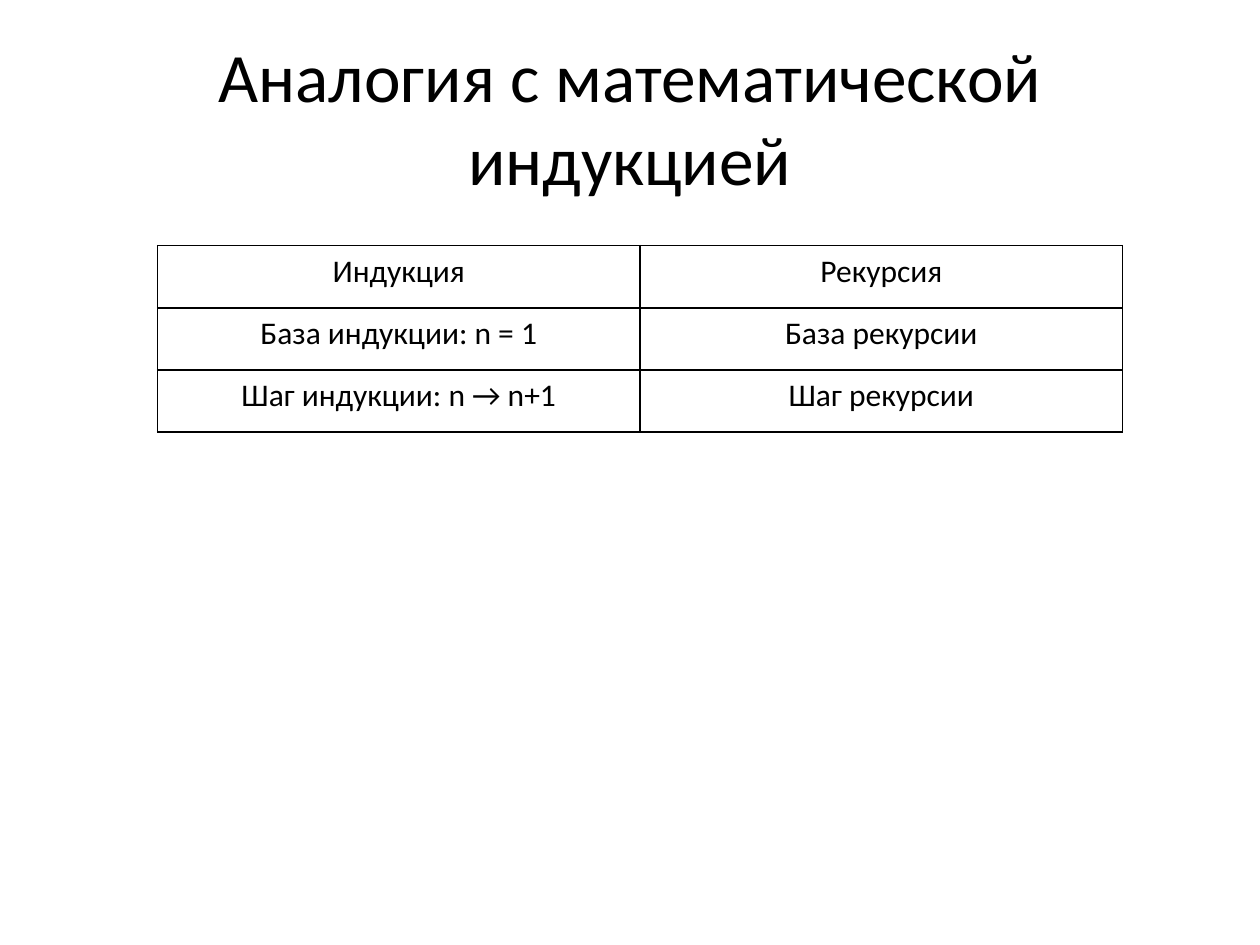
from lxml.etree import SubElement
from pptx import Presentation
from pptx.dml.color import RGBColor
from pptx.enum.text import MSO_ANCHOR, PP_ALIGN
from pptx.oxml.ns import qn
from pptx.util import Inches, Pt

FONT = "Calibri"
BLACK = "000000"
ROWS = [
    ("Индукция", "Рекурсия"),
    ("База индукции: n = 1", "База рекурсии"),
    ("Шаг индукции: n → n+1", "Шаг рекурсии"),
]


def color(value):
    return RGBColor.from_string(value)


def set_text(frame, text, size):
    frame.text = text
    para = frame.paragraphs[0]
    para.alignment = PP_ALIGN.CENTER
    for span in para.runs:
        span.font.name = FONT
        span.font.size = Pt(size)
        span.font.bold = False
        span.font.color.rgb = color(BLACK)


def set_borders(cell, value, width):
    """Draw a solid line on all four sides of a cell that has no fill yet."""
    properties = cell._tc.get_or_add_tcPr()
    for side in ("a:lnL", "a:lnR", "a:lnT", "a:lnB"):
        line = SubElement(properties, qn(side), w=str(Pt(width)))
        fill = SubElement(line, qn("a:solidFill"))
        SubElement(fill, qn("a:srgbClr"), val=value)


def place_title(page, text, left, top, width, height):
    title = page.shapes.title
    title.left, title.top = Inches(left), Inches(top)
    title.width, title.height = Inches(width), Inches(height)
    frame = title.text_frame
    frame.word_wrap = True
    frame.vertical_anchor = MSO_ANCHOR.MIDDLE
    set_text(frame, text, 39.6)


def place_comparison(page, rows, left, top, width, height):
    box = [Inches(length) for length in (left, top, width, height)]
    table = page.shapes.add_table(len(rows), len(rows[0]), *box).table
    table.first_row = False
    table.horz_banding = False
    for row, texts in enumerate(rows):
        for column, text in enumerate(texts):
            cell = table.cell(row, column)
            set_text(cell.text_frame, text, 18)
            set_borders(cell, BLACK, 1)
            cell.fill.background()


def main():
    deck = Presentation()
    deck.slide_width, deck.slide_height = Inches(10), Inches(7.5)
    page = deck.slides.add_slide(deck.slide_layouts[5])
    place_title(page, "Аналогия с математической индукцией", 0.5, 0.3, 9, 1.25)
    place_comparison(page, ROWS, 1.25, 1.95, 7.66, 1.48)
    deck.save("out.pptx")


if __name__ == "__main__":
    main()
